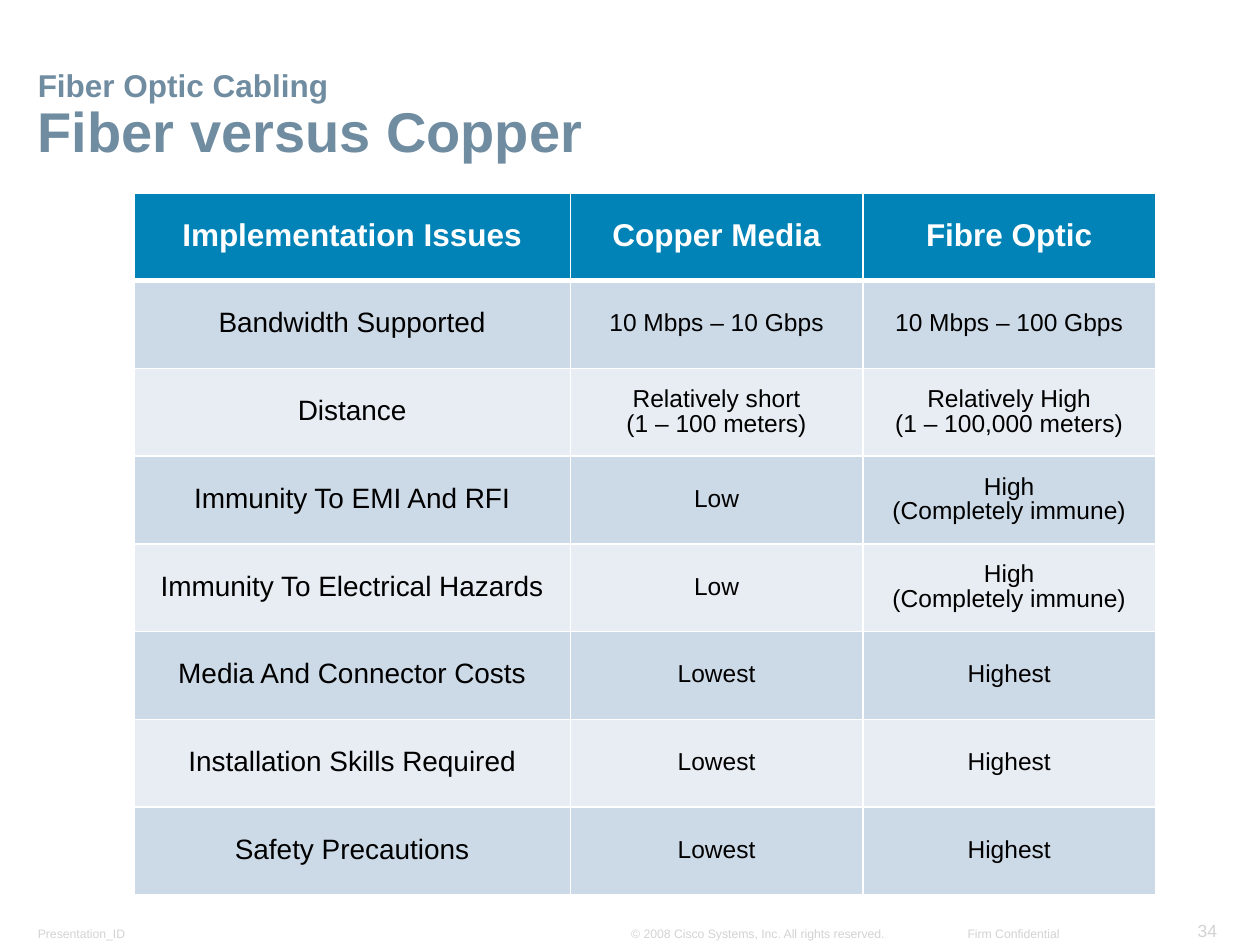
from lxml.etree import SubElement
from pptx import Presentation
from pptx.dml.color import RGBColor
from pptx.enum.text import MSO_ANCHOR as Anchor, PP_ALIGN as Align
from pptx.oxml.ns import qn
from pptx.util import Pt

WHITE = RGBColor(0xFF, 0xFF, 0xFF)
BLACK = RGBColor(0x00, 0x00, 0x00)
FOOTER_GRAY = RGBColor(0xD3, 0xD3, 0xD3)
TITLE_BLUE = RGBColor(0x70, 0x8C, 0xA1)
HEADER_BLUE = RGBColor(0x01, 0x83, 0xB7)
BANDS = [RGBColor(0xE7, 0xED, 0xF3), RGBColor(0xCC, 0xD9, 0xE6)]

ROWS = [
    ("Implementation Issues", "Copper Media", "Fibre Optic"),
    ("Bandwidth Supported", "10 Mbps – 10 Gbps", "10 Mbps – 100 Gbps"),
    ("Distance", "Relatively short\n(1 – 100 meters)", "Relatively High\n(1 – 100,000 meters)"),
    ("Immunity To EMI And RFI", "Low", "High\n(Completely immune)"),
    ("Immunity To Electrical Hazards", "Low", "High\n(Completely immune)"),
    ("Media And Connector Costs", "Lowest", "Highest"),
    ("Installation Skills Required", "Lowest", "Highest"),
    ("Safety Precautions", "Lowest", "Highest"),
]
COLUMN_WIDTHS = [249.4, 167.2, 167.2]
ROW_HEIGHT = 50.15


def add_text(slide, text, left, top, width, height, sizes, color,
             align=Align.LEFT, bold=False, wrap=True):
    """Add a bottom-anchored text box; sizes holds one size per run."""
    box = slide.shapes.add_textbox(Pt(left), Pt(top), Pt(width), Pt(height))
    frame = box.text_frame
    frame.word_wrap = wrap
    frame.vertical_anchor = Anchor.BOTTOM
    frame.margin_left = frame.margin_right = Pt(6.5)
    frame.margin_top = frame.margin_bottom = Pt(3.2)
    para = frame.paragraphs[0]
    para.text = text
    para.alignment = align
    for span, size in zip(para.runs, sizes):
        span.font.name = "Arial"
        span.font.size = Pt(size)
        span.font.bold = bold
        span.font.color.rgb = color
    return para


def add_border(cell, side, width):
    line = SubElement(cell._tc.get_or_add_tcPr(), qn(f"a:ln{side}"), w=str(Pt(width)))
    SubElement(SubElement(line, qn("a:solidFill")), qn("a:srgbClr"), val=str(WHITE))


deck = Presentation()
deck.slide_width, deck.slide_height = Pt(720), Pt(540)
page = deck.slides.add_slide(deck.slide_layouts[6])

# Footer and page number
add_text(page, "Presentation_ID", 15.1, 525.6, 75.6, 15.1, [7], FOOTER_GRAY)
add_text(page, "34", 676.8, 522, 25.2, 18.7, [10], FOOTER_GRAY, Align.RIGHT, wrap=False)
add_text(page, "© 2008 Cisco Systems, Inc. All rights reserved.",
         354.2, 525.6, 159.1, 15.1, [7], FOOTER_GRAY, wrap=False)
add_text(page, "Firm Confidential", 542.9, 525.6, 69.1, 15.1, [7], FOOTER_GRAY,
         Align.RIGHT, wrap=False)

# Title
title = add_text(page, "Fiber Optic Cabling\vFiber versus Copper",
                 15.1, 31, 690.5, 66.2, [18, 32], TITLE_BLUE, bold=True)
title.line_spacing = 0.9

# Comparison table
table = page.shapes.add_table(len(ROWS), len(COLUMN_WIDTHS), Pt(76.5), Pt(110.2),
                              Pt(sum(COLUMN_WIDTHS)), Pt(ROW_HEIGHT * len(ROWS))).table
for column, width in zip(table.columns, COLUMN_WIDTHS):
    column.width = Pt(width)
for row_index, texts in enumerate(ROWS):
    table.rows[row_index].height = Pt(ROW_HEIGHT)
    is_header = row_index == 0
    for column_index, text in enumerate(texts):
        cell = table.cell(row_index, column_index)
        cell.vertical_anchor = Anchor.MIDDLE
        # A thicker rule separates the header from the body
        top_width = 3 if row_index == 1 else 1
        bottom_width = 3 if is_header else 1
        for side, width in zip("LRTB", (1, 1, top_width, bottom_width)):
            add_border(cell, side, width)
        cell.fill.solid()
        cell.fill.fore_color.rgb = HEADER_BLUE if is_header else BANDS[row_index % 2]
        cell.text_frame.text = text
        size = 18 if is_header else 16 if column_index == 0 else 14
        for para in cell.text_frame.paragraphs:
            para.alignment = Align.CENTER
            para.line_spacing = 0.9
            for span in para.runs:
                span.font.name = "Arial"
                span.font.size = Pt(size)
                span.font.bold = is_header
                span.font.color.rgb = WHITE if is_header else BLACK

deck.save("out.pptx")
